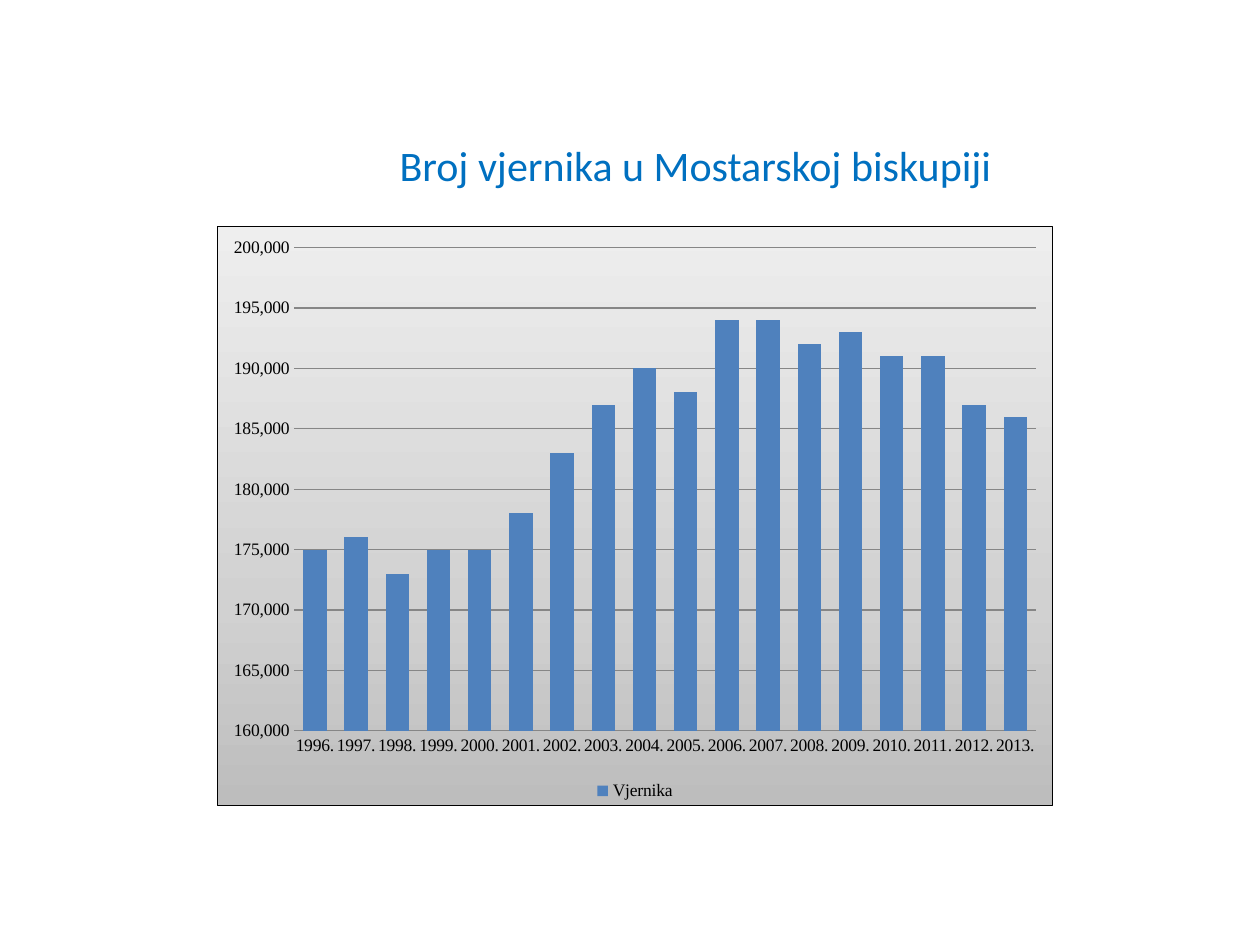
from lxml.etree import fromstring
from pptx import Presentation
from pptx.chart.data import CategoryChartData
from pptx.dml.color import RGBColor
from pptx.enum.chart import XL_CHART_TYPE, XL_LEGEND_POSITION, XL_TICK_MARK
from pptx.enum.text import MSO_ANCHOR, PP_ALIGN
from pptx.oxml.ns import nsdecls
from pptx.util import Pt

TITLE = "Broj vjernika u Mostarskoj biskupiji"
SERIES = "Vjernika"
YEARS = [f"{year}." for year in range(1996, 2014)]
BELIEVERS = [
    175000, 176000, 173000, 175000, 175000, 178000, 183000, 187000, 190000,
    188000, 194000, 194000, 192000, 193000, 191000, 191000, 187000, 186000,
]
AXIS_RANGE = (160000, 200000, 5000)

TITLE_BOX = (90.7, 49, 613.4, 90)
CHART_BOX = (123.8, 128.9, 478.1, 331.9)

THEME = {
    "title_font": "Calibri", "title_size": 24, "title": "0070C0",
    "chart_font": "Times New Roman", "chart_size": 10, "text": "000000",
    "bar": "4F81BD", "grid": "868686", "border": "000000", "line": 0.75,
    "gradient": [(0, "BDBDBD"), (35, "D1D1D1"), (100, "EEEEEE")],
}


def set_font(font, role, color):
    font.name = THEME[f"{role}_font"]
    font.size = Pt(THEME[f"{role}_size"])
    font.bold = False
    font.color.rgb = RGBColor.from_string(THEME[color])


def set_line(line):
    line.color.rgb = RGBColor.from_string(THEME["grid"])
    line.width = Pt(THEME["line"])


def add_title(s):
    sp = s.shapes.title
    sp.left, sp.top, sp.width, sp.height = map(Pt, TITLE_BOX)
    tf = sp.text_frame
    tf.text = TITLE
    tf.word_wrap = True
    tf.vertical_anchor = MSO_ANCHOR.MIDDLE
    p = tf.paragraphs[0]
    p.alignment = PP_ALIGN.CENTER
    set_font(p.runs[0].font, "title", "title")


def fill_chart_area(chart):
    stops = "".join(
        f'<a:gs pos="{pos * 1000}"><a:srgbClr val="{color}"/></a:gs>'
        for pos, color in THEME["gradient"]
    )
    sp_pr = fromstring(
        f'<c:spPr {nsdecls("c", "a")}>'
        f'<a:gradFill rotWithShape="1"><a:gsLst>{stops}</a:gsLst>'
        f'<a:lin ang="{270 * 60000}" scaled="0"/></a:gradFill>'
        f'<a:ln w="{Pt(THEME["line"])}"><a:solidFill>'
        f'<a:srgbClr val="{THEME["border"]}"/></a:solidFill></a:ln></c:spPr>'
    )
    chart.element.chart.addnext(sp_pr)


def add_believers_chart(s):
    data = CategoryChartData(number_format="#,##0")
    data.categories = YEARS
    data.add_series(SERIES, BELIEVERS)
    chart = s.shapes.add_chart(
        XL_CHART_TYPE.COLUMN_CLUSTERED, *map(Pt, CHART_BOX), data
    ).chart
    set_font(chart.font, "chart", "text")
    chart.has_title = False
    chart.has_legend = True
    chart.legend.position = XL_LEGEND_POSITION.BOTTOM
    chart.legend.include_in_layout = False

    plot = chart.plots[0]
    plot.gap_width = 75
    plot.vary_by_categories = False
    fill = plot.series[0].format.fill
    fill.solid()
    fill.fore_color.rgb = RGBColor.from_string(THEME["bar"])

    years, values = chart.category_axis, chart.value_axis
    for axis in (years, values):
        axis.major_tick_mark = axis.minor_tick_mark = XL_TICK_MARK.NONE
    set_line(years.format.line)
    values.format.line.fill.background()
    values.has_major_gridlines = True
    set_line(values.major_gridlines.format.line)
    values.minimum_scale, values.maximum_scale, values.major_unit = AXIS_RANGE
    values.tick_labels.number_format = "#,##0"
    values.tick_labels.number_format_is_linked = False
    fill_chart_area(chart)


def main():
    prs = Presentation()
    prs.slide_width, prs.slide_height = Pt(720), Pt(540)
    s = prs.slides.add_slide(prs.slide_layouts[5])
    add_title(s)
    add_believers_chart(s)
    prs.save("out.pptx")


if __name__ == "__main__":
    main()
